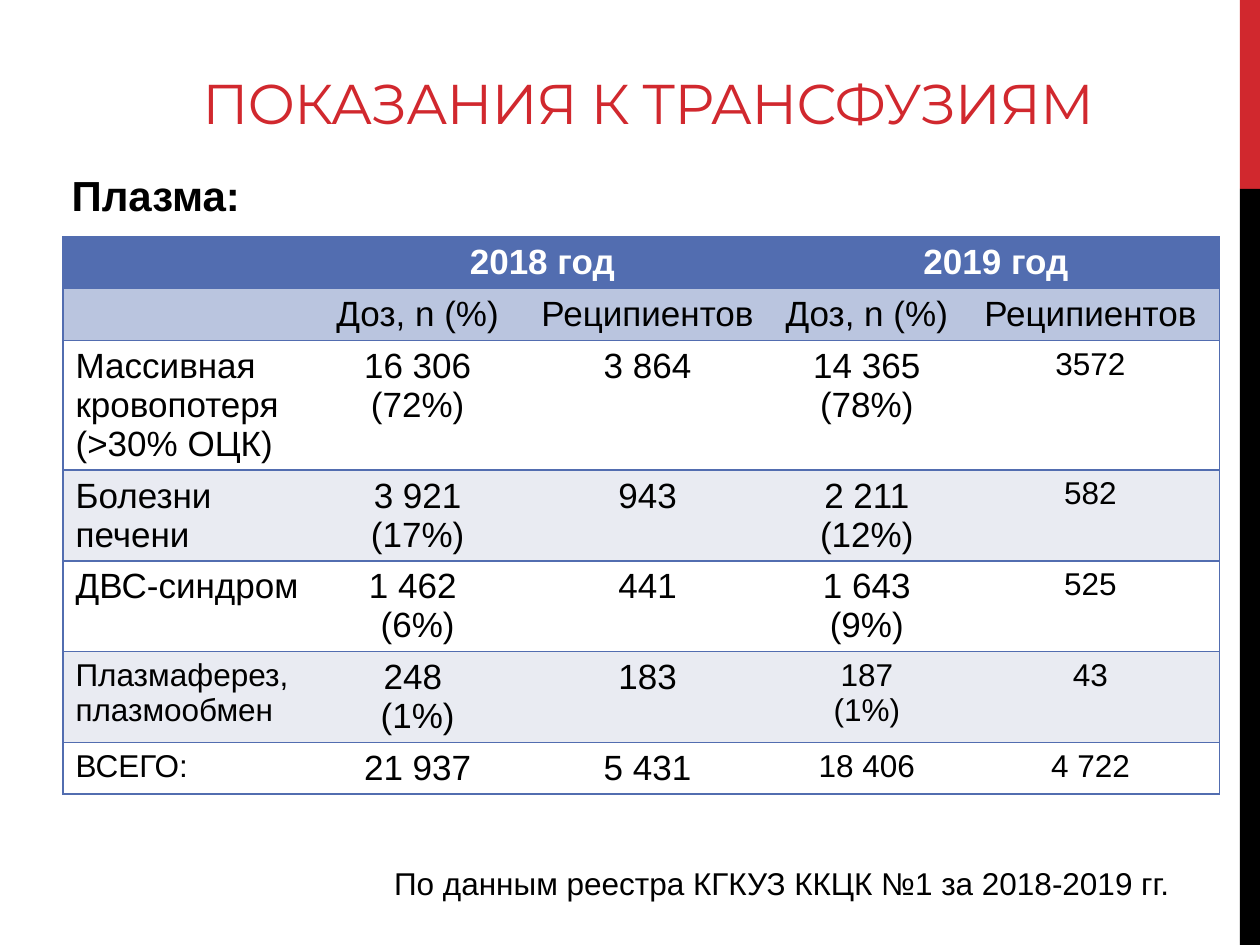
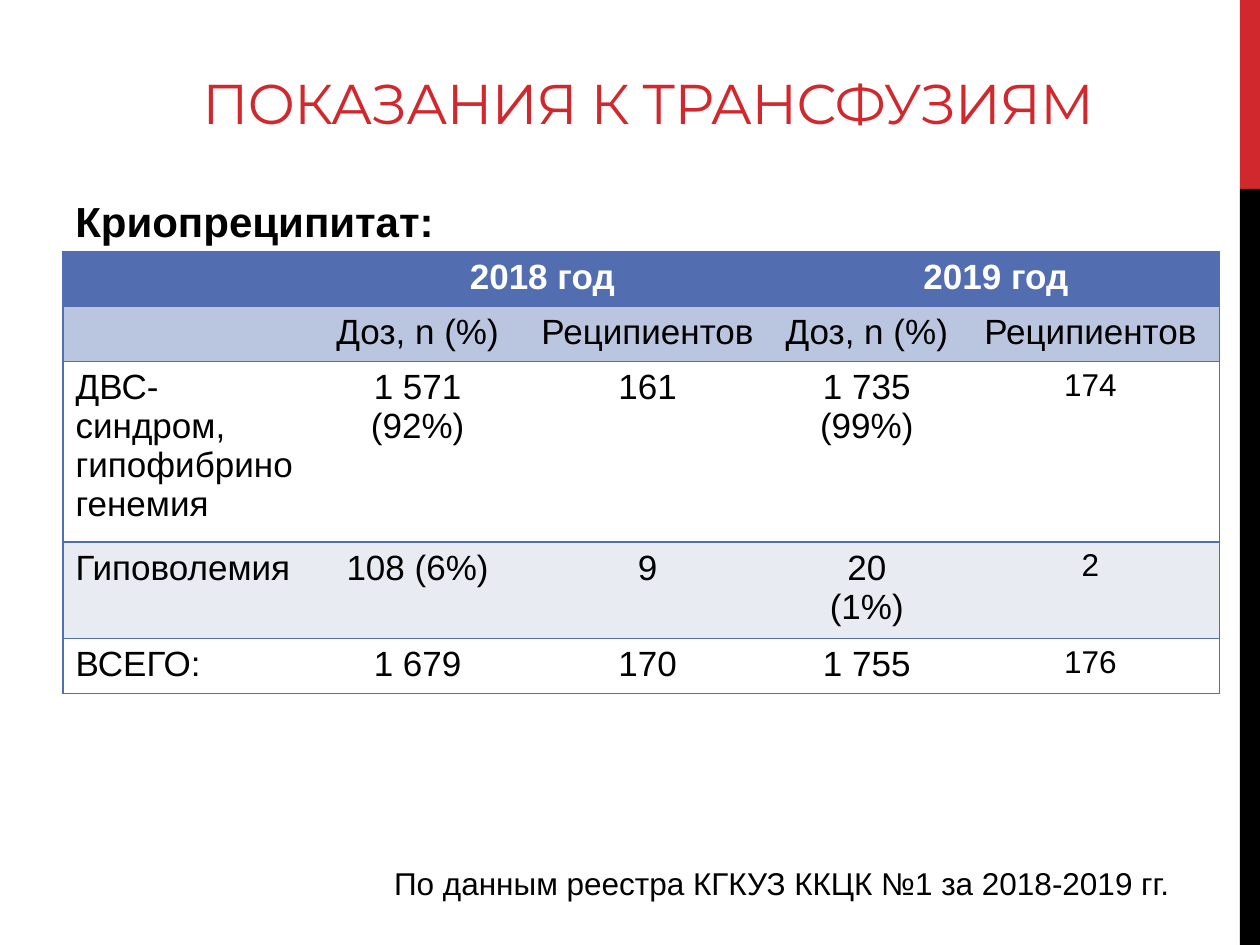
from dataclasses import dataclass

from lxml import etree
from pptx import Presentation
from pptx.dml.color import RGBColor
from pptx.enum.shapes import MSO_SHAPE
from pptx.enum.text import MSO_ANCHOR, MSO_AUTO_SIZE, PP_ALIGN
from pptx.oxml.ns import qn
from pptx.util import Pt

RECT = MSO_SHAPE.RECTANGLE
LEFT, CENTER = PP_ALIGN.LEFT, PP_ALIGN.CENTER
BOTTOM = MSO_ANCHOR.BOTTOM
FIT_SHAPE = MSO_AUTO_SIZE.SHAPE_TO_FIT_TEXT

# Shared colours, fonts and measures (points)
RED, BLACK, WHITE = "D1282E", "000000", "FFFFFF"
BLUE, PALE_BLUE, PALE_GREY = "526DB0", "BAC5DF", "E9EBF2"
BODY_FONT, TITLE_FONT = "Arial", "Montserrat"
SLIDE_W, SLIDE_H = 720, 540
BAND_X, BAND_SPLIT = 708.5, 108
TABLE_X = 36
COLUMNS = (142.56, 120.24, 142.56, 108, 147.6)
LINE_H, CELL_PADDING = 22.34, 7.2
TEXT_SIZE, SMALL_SIZE = 20, 18

TITLE = "ПОКАЗАНИЯ К ТРАНСФУЗИЯМ"
SOURCE = "По данным реестра КГКУЗ ККЦК №1 за 2018-2019 гг."


@dataclass(frozen=True)
class Row:
    cells: tuple[str, ...]
    lines: int = 1
    small: tuple[int, ...] = (4,)  # columns set in the smaller size
    fill: str = WHITE
    color: str = BLACK
    bold: bool = False


@dataclass(frozen=True)
class Indications:
    heading: str
    heading_at: tuple[float, float, float]  # left, top, width
    table_y: float
    rows: tuple[Row, ...]


HEADER = (
    Row(("", "2018 год", "", "2019 год", ""), small=(), fill=BLUE, color=WHITE, bold=True),
    Row(("", "Доз, n (%)", "Реципиентов", "Доз, n (%)", "Реципиентов"), small=(), fill=PALE_BLUE),
)

SLIDES = (
    Indications("Плазма:", (33.84, 93.6, 111.6), 135.36, (
        Row(("Массивная кровопотеря (>30% ОЦК)", "16 306 (72%)", "3 864",
             "14 365\n(78%)", "3572"), 3),
        Row(("Болезни печени", "3 921 (17%)", "943", "2 211\n(12%)", "582"), 2, fill=PALE_GREY),
        Row(("ДВС-синдром", "1 462 \n(6%)", "441", "1 643\n(9%)", "525"), 2),
        Row(("Плазмаферез, плазмообмен", "248 \n(1%)", "183", "187\n(1%)", "43"), 2,
            small=(0, 3, 4), fill=PALE_GREY),
        Row(("ВСЕГО:", "21 937", "5 431", "18 406", "4 722"), small=(0, 3, 4)),
    )),
    Indications("Криопреципитат:", (36, 108, 221), 144, (
        Row(("ДВС-синдром, гипофибриногенемия", "1 571 (92%)", "161",
             "1 735\n(99%)", "174"), 4),
        Row(("Гиповолемия", "108 (6%)", "9", "20\n(1%)", "2"), 2, fill=PALE_GREY),
        Row(("ВСЕГО:", "1 679", "170", "1 755", "176")),
    )),
)


def rgb(value: str) -> RGBColor:
    return RGBColor.from_string(value)


def style(p, size: float, color: str, bold: bool = False, align=LEFT, font: str = BODY_FONT) -> None:
    p.alignment = align
    p.font.name, p.font.size, p.font.bold = font, Pt(size), bold
    p.font.color.rgb = rgb(color)


def add_band(s, top: float, height: float, color: str) -> None:
    sp = s.shapes.add_shape(RECT, Pt(BAND_X), Pt(top), Pt(SLIDE_W - BAND_X), Pt(height))
    sp.shadow.inherit = False
    sp.fill.solid()
    sp.fill.fore_color.rgb = rgb(color)
    sp.line.fill.background()


def add_label(s, text: str, left: float, top: float, width: float, height: float,
              size: float, bold: bool = False) -> None:
    tf = s.shapes.add_textbox(Pt(left), Pt(top), Pt(width), Pt(height)).text_frame
    tf.word_wrap = False
    tf.auto_size = FIT_SHAPE
    tf.text = text
    style(tf.paragraphs[0], size, BLACK, bold)


def add_title(s) -> None:
    tf = s.shapes.add_textbox(Pt(36), Pt(12.24), Pt(668.88), Pt(69.12)).text_frame
    tf.word_wrap = True
    tf.vertical_anchor = BOTTOM
    p = tf.paragraphs[0]
    r = p.add_run()
    r.text = TITLE
    r._r.get_or_add_rPr().set("spc", "-60")
    style(p, 32, RED, align=CENTER, font=TITLE_FONT)


def set_borders(cell, col: int) -> None:
    """Rule every row; close only the outer sides of the table."""
    visible = {"lnL": col == 0, "lnR": col == len(COLUMNS) - 1, "lnT": True, "lnB": True}
    tc_pr = cell._tc.get_or_add_tcPr()
    for i, (side, shown) in enumerate(visible.items()):
        ln = etree.Element(qn(f"a:{side}"), w=str(Pt(1)))
        if shown:
            fill = etree.SubElement(ln, qn("a:solidFill"))
            etree.SubElement(fill, qn("a:srgbClr"), val=BLUE)
        else:
            etree.SubElement(ln, qn("a:noFill"))
        tc_pr.insert(i, ln)


def fill_cell(cell, row: Row, col: int) -> None:
    cell.fill.solid()
    cell.fill.fore_color.rgb = rgb(row.fill)
    set_borders(cell, col)
    cell.text = row.cells[col]
    size = SMALL_SIZE if col in row.small else TEXT_SIZE
    for p in cell.text_frame.paragraphs:
        style(p, size, row.color, row.bold, CENTER if col else LEFT)


def add_indications_table(s, top: float, rows: tuple[Row, ...]) -> None:
    heights = [row.lines * LINE_H + CELL_PADDING for row in rows]
    table = s.shapes.add_table(len(rows), len(COLUMNS), Pt(TABLE_X), Pt(top),
                               Pt(sum(COLUMNS)), Pt(sum(heights))).table
    for col, width in enumerate(COLUMNS):
        table.columns[col].width = Pt(width)
    for i, row in enumerate(rows):
        table.rows[i].height = Pt(heights[i])
        for col in range(len(COLUMNS)):
            fill_cell(table.cell(i, col), row, col)
    # Each year spans its doses and recipients
    for col in (1, 3):
        table.cell(0, col).merge(table.cell(0, col + 1))


def build_slide(prs, data: Indications) -> None:
    s = prs.slides.add_slide(prs.slide_layouts[6])
    # Side band
    add_band(s, 0, BAND_SPLIT, RED)
    add_band(s, BAND_SPLIT, SLIDE_H - BAND_SPLIT, BLACK)
    # Table with its heading, title and source line
    add_indications_table(s, data.table_y, HEADER + data.rows)
    left, top, width = data.heading_at
    add_label(s, data.heading, left, top, width, 36, 24, bold=True)
    add_title(s)
    add_label(s, SOURCE, 218.16, 490.32, 480.24, 28.8, 18)


def main() -> None:
    prs = Presentation()
    prs.slide_width, prs.slide_height = Pt(SLIDE_W), Pt(SLIDE_H)
    for data in SLIDES:
        build_slide(prs, data)
    prs.save("out.pptx")


if __name__ == "__main__":
    main()
